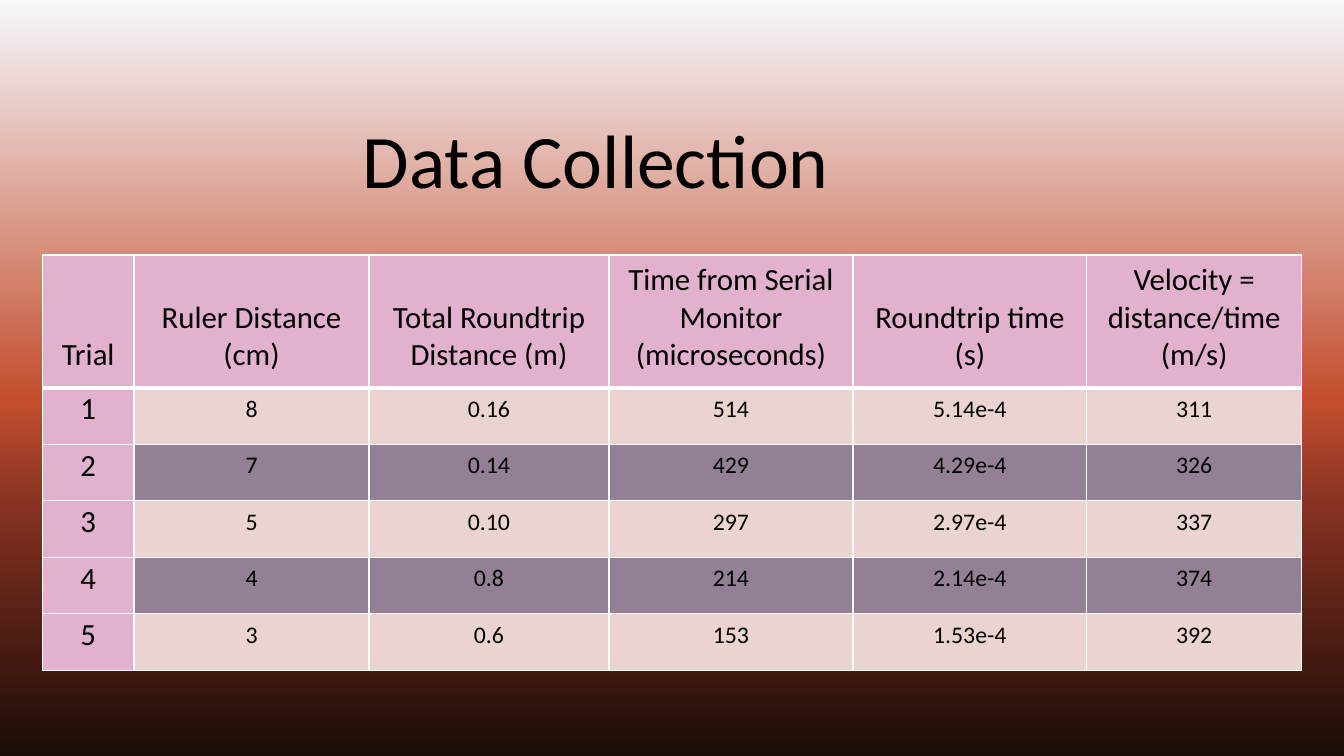
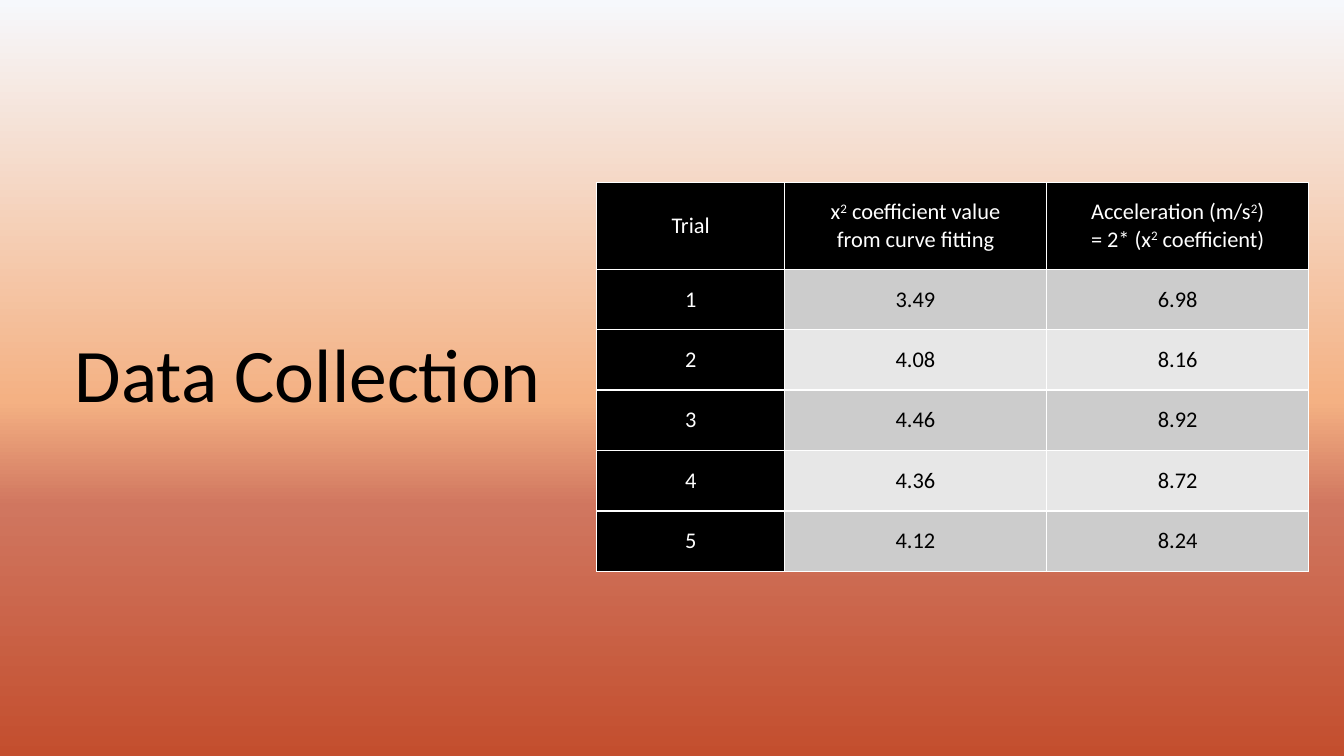
from pptx import Presentation, util as u
from pptx.dml.color import RGBColor
from pptx.enum import text as t
from pptx.oxml.ns import qn
from lxml import etree

BLACK = RGBColor(0, 0, 0)
WHITE = RGBColor(255, 255, 255)
PINK = RGBColor(0xE1, 0xB1, 0xCE)
BLUSH = RGBColor(0xEB, 0xD4, 0xD0)
MAUVE = RGBColor(0x93, 0x80, 0x94)
GRAY = RGBColor(0xCC, 0xCC, 0xCC)
PALE = RGBColor(0xE7, 0xE7, 0xE7)
MIST = RGBColor(0xF6, 0xF8, 0xFC)
RUST = RGBColor(0xC3, 0x4E, 0x2E)
BRICK = RGBColor(0x86, 0x31, 0x22)
DARK = RGBColor(0x1A, 0x0C, 0x05)
PEACH = RGBColor(0xF4, 0xB1, 0x83)
CORAL = RGBColor(0xD0, 0x76, 0x5F)
FONT = "Calibri"
TITLE = "Data Collection"
STOPS = (0, 53, 67, 100)
MID, LOW = t.MSO_ANCHOR.MIDDLE, t.MSO_ANCHOR.BOTTOM

SPEED = [
    ["Trial", "Ruler Distance (cm)", "Total Roundtrip Distance (m)",
     "Time from Serial Monitor (microseconds)", "Roundtrip time (s)",
     "Velocity = distance/time (m/s)"],
    ["1", "8", "0.16", "514", "5.14e-4", "311"],
    ["2", "7", "0.14", "429", "4.29e-4", "326"],
    ["3", "5", "0.10", "297", "2.97e-4", "337"],
    ["4", "4", "0.8", "214", "2.14e-4", "374"],
    ["5", "3", "0.6", "153", "1.53e-4", "392"],
]
ACCEL = [
    ["Trial", "x^2^ coefficient value\nfrom curve fitting",
     "Acceleration (m/s^2^)\n= 2* (x^2^ coefficient)"],
    ["1", "3.49", "6.98"],
    ["2", "4.08", "8.16"],
    ["3", "4.46", "8.92"],
    ["4", "4.36", "8.72"],
    ["5", "4.12", "8.24"],
]
SLIDES = [
    dict(back=(MIST, RUST, BRICK, DARK), title=(1.79, 0.33, 8.24, 1.75),
         hold=LOW, rows=SPEED, at=(0.42, 2.53),
         cols=(0.91, 2.33, 2.38, 2.42, 2.32, 2.13), tall=(1.32, 0.56),
         key=PINK, bands=(BLUSH, MAUVE), ink=BLACK, sizes=(22, 17),
         head=LOW, foot=0.14, rule=3),
    dict(back=(MIST, PEACH, CORAL, RUST), title=(0.46, 2.58, 5.19, 2.34),
         hold=MID, rows=ACCEL, at=(5.92, 1.81),
         cols=(1.86, 2.6, 2.6), tall=(0.86, 0.6),
         key=BLACK, bands=(GRAY, PALE), ink=WHITE, sizes=(16, 16),
         head=MID, foot=0, rule=1),
]


def style(item, **look):
    for name, value in look.items():
        setattr(item, name, value)


def ink(font, size, color):
    style(font, name=FONT, size=u.Pt(size), bold=False)
    font.color.rgb = color


def paint(slide, colors):
    fill = slide.background.fill
    fill.gradient()
    fill.gradient_angle = 270
    stops = next(slide.element.iter(qn("a:gsLst")))
    for old in list(stops):
        stops.remove(old)
    for pos, color in zip(STOPS, colors):
        stop = etree.SubElement(stops, qn("a:gs"), pos=str(pos * 1000))
        etree.SubElement(stop, qn("a:srgbClr"), val=str(color))


def border(cell, widths):
    props = cell._tc.get_or_add_tcPr()
    for side, width in zip("LRTB", widths):
        line = etree.SubElement(props, qn(f"a:ln{side}"), w=str(u.Pt(width)))
        fill = etree.SubElement(line, qn("a:solidFill"))
        etree.SubElement(fill, qn("a:srgbClr"), val=str(WHITE))


def write(cell, words, size, color):
    para = cell.text_frame.paragraphs[0]
    para.alignment = t.PP_ALIGN.CENTER
    for i, line in enumerate(words.split("\n")):
        if i:
            para.add_line_break()
        for j, part in enumerate(line.split("^")):
            run = para.add_run()
            run.text = part
            ink(run.font, size, color)
            if j % 2:
                run.font._element.set("baseline", "30000")


def head(slide, spec_):
    title = slide.shapes.title
    style(title, **dict(zip(("left", "top", "width", "height"),
                            map(u.Inches, spec_["title"]))))
    frame = title.text_frame
    frame.text = TITLE
    style(frame, vertical_anchor=spec_["hold"], word_wrap=True,
          auto_size=t.MSO_AUTO_SIZE.NONE)
    para = frame.paragraphs[0]
    style(para, alignment=t.PP_ALIGN.CENTER, line_spacing=0.9)
    ink(para.font, 54, BLACK)


def grid(slide, plan):
    rows, cols = plan["rows"], plan["cols"]
    first, rest = plan["tall"]
    size = (sum(cols), first + rest * (len(rows) - 1))
    table = slide.shapes.add_table(
        len(rows), len(cols), *map(u.Inches, plan["at"] + size)).table
    style(table, first_col=True, horz_banding=False)
    for col, width in zip(table.columns, cols):
        col.width = u.Inches(width)
    for r, row in enumerate(rows):
        table.rows[r].height = u.Inches(rest if r else first)
        for c, words in enumerate(row):
            cell = table.cell(r, c)
            key = r == 0 or c == 0
            border(cell, (1, 1, plan["rule"] if r == 1 else 1,
                          plan["rule"] if r == 0 else 1))
            cell.fill.solid()
            cell.fill.fore_color.rgb = (
                plan["key"] if key else plan["bands"][(r - 1) % 2])
            style(cell, vertical_anchor=MID if r else plan["head"],
                  margin_left=u.Inches(0.07), margin_right=u.Inches(0.07),
                  margin_top=0, margin_bottom=u.Inches(plan["foot"]))
            write(cell, words, plan["sizes"][0 if key else 1],
                  plan["ink"] if key else BLACK)


def main():
    deck = Presentation()
    style(deck, slide_width=u.Inches(13.33), slide_height=u.Inches(7.5))
    for plan in SLIDES:
        slide = deck.slides.add_slide(deck.slide_layouts[5])
        paint(slide, plan["back"])
        head(slide, plan)
        grid(slide, plan)
    deck.save("out.pptx")


if __name__ == "__main__":
    main()
